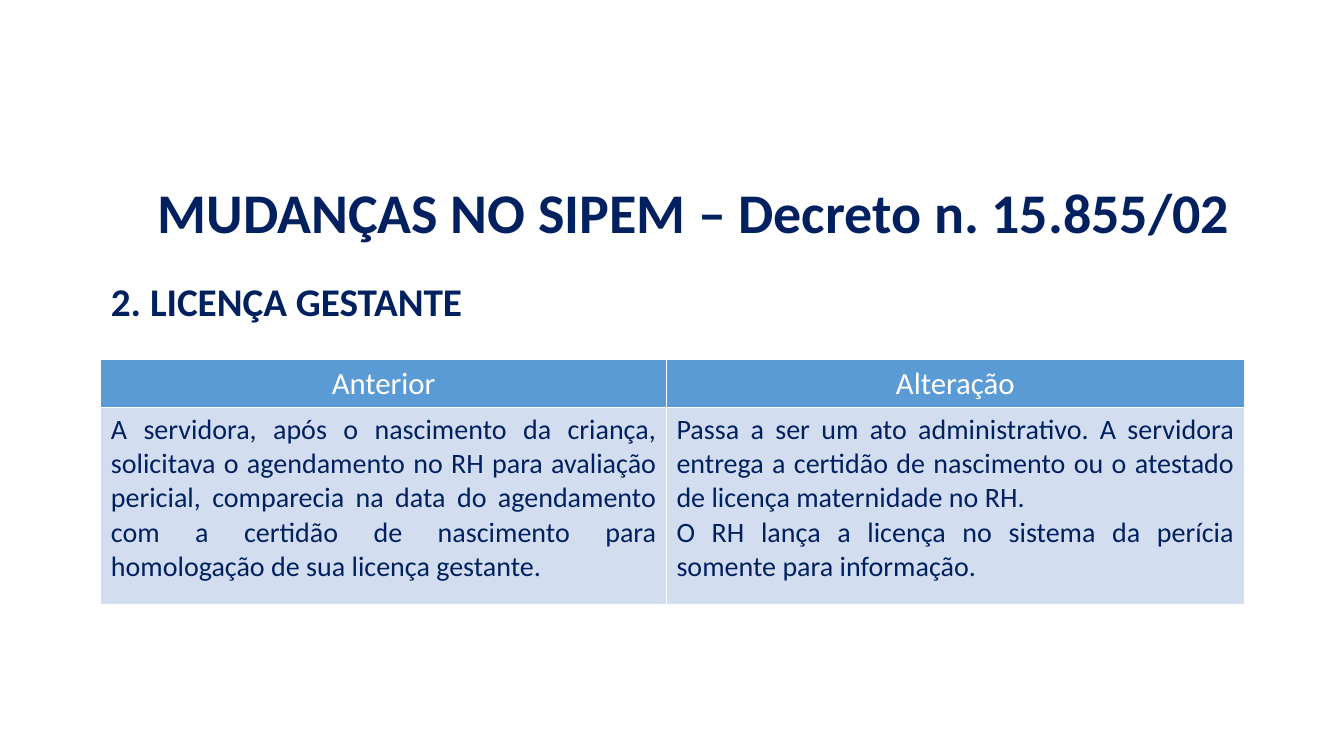
from lxml.etree import SubElement
from pptx import Presentation
from pptx.dml.color import RGBColor
from pptx.enum.text import MSO_ANCHOR as Anchor, MSO_AUTO_SIZE as AutoSize, PP_ALIGN as Align
from pptx.oxml import parse_xml
from pptx.oxml.ns import nsdecls, qn
from pptx.util import Inches, Pt

NAVY = "002060"
WHITE = "FFFFFF"
HEADER_BLUE = "5B9BD5"
PALE_BLUE = "D2DEEF"


def color(value):
    return RGBColor.from_string(value)


def write(text_frame, text, size=20, fill=NAVY, bold=False, align=Align.LEFT, spacing=1.0):
    for index, line in enumerate(text.split("\n")):
        paragraph = text_frame.add_paragraph() if index else text_frame.paragraphs[0]
        paragraph.alignment = align
        paragraph.line_spacing = spacing
        paragraph.space_before = Pt(0)
        run = paragraph.add_run()
        run.text = line
        run.font.name = "Calibri"
        run.font.size = Pt(size)
        run.font.bold = bold
        run.font.color.rgb = color(fill)


presentation = Presentation()
presentation.slide_width = Inches(13.33)
presentation.slide_height = Inches(7.5)
slide = presentation.slides.add_slide(presentation.slide_layouts[1])

title, body = slide.placeholders
placements = [
    (title, 1, 1.73, 11.76, 0.81, Anchor.MIDDLE),
    (body, 1, 2.75, 11.33, 3.59, Anchor.TOP),
]
for shape, left, top, width, height, anchor in placements:
    shape.left, shape.top = Inches(left), Inches(top)
    shape.width, shape.height = Inches(width), Inches(height)
    shape.text_frame.auto_size = AutoSize.NONE
    shape.text_frame.word_wrap = True
    shape.text_frame.vertical_anchor = anchor

write(title.text_frame, "MUDANÇAS NO SIPEM – Decreto n. 15.855/02",
      size=40, bold=True, align=Align.CENTER, spacing=0.9)
write(body.text_frame, "2. LICENÇA GESTANTE", size=28, bold=True, spacing=0.9)
properties = body.text_frame.paragraphs[0]._p.get_or_add_pPr()
properties.set("marL", "0")
properties.set("indent", "0")
SubElement(properties, qn("a:buNone"))

rows = [
    ["Anterior", "Alteração"],
    [
        "A servidora, após o nascimento da criança, solicitava o agendamento no RH "
        "para avaliação pericial, comparecia na data do agendamento com a certidão "
        "de nascimento para homologação de sua licença gestante.",
        "Passa a ser um ato administrativo. A servidora entrega a certidão de "
        "nascimento ou o atestado de licença maternidade no RH.\n"
        "O RH lança a licença no sistema da perícia somente para informação.",
    ],
]
header_format = dict(size=22, fill=WHITE, align=Align.CENTER)
detail_format = dict(size=20, fill=NAVY, align=Align.JUSTIFY)

table = slide.shapes.add_table(2, 2, Inches(1), Inches(3.57), Inches(11.34), Inches(2.42)).table
for column, width in zip(table.columns, (5.61, 5.73)):
    column.width = Inches(width)
for row, height in zip(table.rows, (0.46, 1.96)):
    row.height = Inches(height)

for row_index, texts in enumerate(rows):
    is_header = row_index == 0
    for column_index, text in enumerate(texts):
        cell = table.cell(row_index, column_index)
        cell.vertical_anchor = Anchor.MIDDLE if is_header else Anchor.TOP
        write(cell.text_frame, text, **(header_format if is_header else detail_format))
        for side in ("lnL", "lnR", "lnT", "lnB"):
            cell._tc.get_or_add_tcPr().append(parse_xml(
                f'<a:{side} {nsdecls("a")} w="{Pt(1)}"><a:solidFill>'
                f'<a:srgbClr val="{WHITE}"/></a:solidFill></a:{side}>'))
        cell.fill.solid()
        cell.fill.fore_color.rgb = color(HEADER_BLUE if is_header else PALE_BLUE)

presentation.save("out.pptx")
